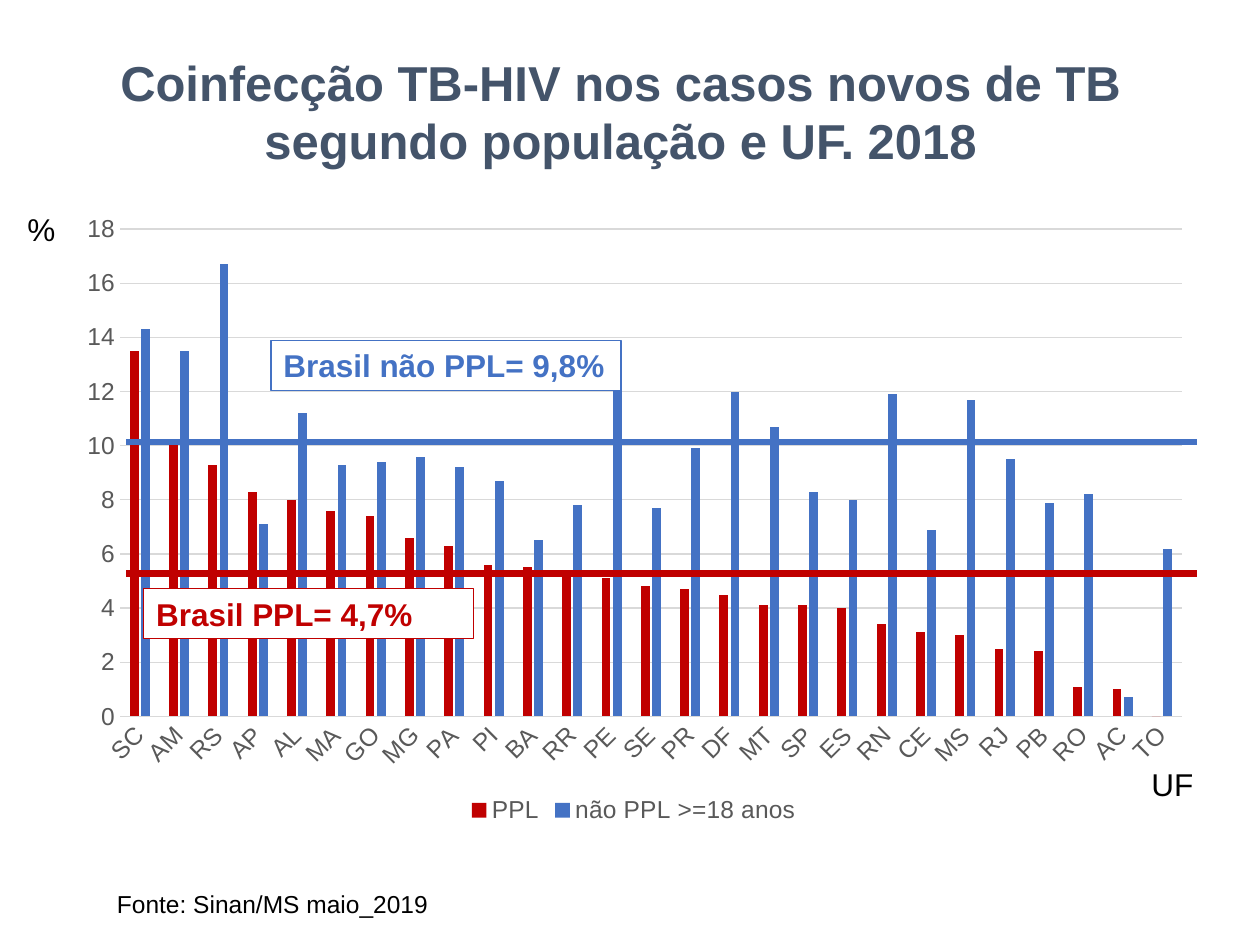
from dataclasses import dataclass
from typing import Optional

from lxml import etree
from pptx import Presentation
from pptx.chart.data import CategoryChartData
from pptx.dml.color import RGBColor
from pptx.enum.chart import XL_CHART_TYPE, XL_LEGEND_POSITION, XL_TICK_MARK
from pptx.enum.shapes import MSO_CONNECTOR, MSO_SHAPE
from pptx.enum.text import MSO_ANCHOR, PP_ALIGN
from pptx.oxml import parse_xml
from pptx.oxml.ns import nsdecls, qn
from pptx.util import Inches, Pt

COLUMN = XL_CHART_TYPE.COLUMN_CLUSTERED
BOTTOM = XL_LEGEND_POSITION.BOTTOM
NO_TICK = XL_TICK_MARK.NONE
STRAIGHT = MSO_CONNECTOR.STRAIGHT
RECT = MSO_SHAPE.RECTANGLE
TOP, MIDDLE = MSO_ANCHOR.TOP, MSO_ANCHOR.MIDDLE
LEFT, CENTER = PP_ALIGN.LEFT, PP_ALIGN.CENTER

FONT = "Arial"
COLORS = {"title": "44546A", "ppl": "C00000", "other": "4472C4",
          "axis": "595959", "grid": "D9D9D9", "text": "000000", "white": "FFFFFF"}
WIDTH, HEIGHT = Inches(10), Inches(7.5)
COLS, ROWS = 100, 75

UFS = ("SC AM RS AP AL MA GO MG PA PI BA RR PE SE PR DF MT SP ES RN CE MS "
       "RJ PB RO AC TO").split()
SERIES = {
    "PPL": ("ppl", [13.5, 10.1, 9.3, 8.3, 8, 7.6, 7.4, 6.6, 6.3, 5.6, 5.5, 5.3, 5.1, 4.8,
                    4.7, 4.5, 4.1, 4.1, 4, 3.4, 3.1, 3, 2.5, 2.4, 1.1, 1, 0]),
    "não PPL >=18 anos": ("other", [14.3, 13.5, 16.7, 7.1, 11.2, 9.3, 9.4, 9.6, 9.2, 8.7,
                                    6.5, 7.8, 12.2, 7.7, 9.9, 12, 10.7, 8.3, 8, 11.9,
                                    6.9, 11.7, 9.5, 7.9, 8.2, 0.7, 6.2]),
}
PLOT = {"x": 0.05, "y": 0.04, "w": 0.93, "h": 0.78}


@dataclass
class Box:
    col: float
    row: float
    cols: float
    rows: float

    def emu(self) -> tuple:
        return (int(WIDTH * self.col / COLS), int(HEIGHT * self.row / ROWS),
                int(WIDTH * self.cols / COLS), int(HEIGHT * self.rows / ROWS))


@dataclass
class Label:
    text: str
    box: Box
    size: int = 18
    color: str = "text"
    framed: bool = False
    wrap: bool = True


@dataclass
class Average:
    row: float
    color: str
    weight: float


LABELS = [
    Label("Fonte: Sinan/MS maio_2019", Box(8.3, 70.1, 90.6, 3.4), size=14),
    Label("%", Box(1.2, 16.2, 4, 4), wrap=False),
    Label("UF", Box(90.4, 60.2, 6, 4)),
    Label("Brasil não PPL= 9,8%", Box(21.5, 27, 27.8, 4), color="other", framed=True, wrap=False),
    Label("Brasil PPL= 4,7%", Box(11.4, 46.7, 26.2, 4), color="ppl", framed=True),
]
AVERAGES = [Average(45.5, "ppl", 3.75), Average(35.1, "other", 3.25)]


def rgb(name: str) -> RGBColor:
    return RGBColor.from_string(COLORS[name])


def set_font(font, size: float, color: str, bold: bool = False) -> None:
    font.name, font.size, font.bold = FONT, Pt(size), bold
    font.color.rgb = rgb(color)


def set_line(line, color: str, weight: float) -> None:
    line.color.rgb = rgb(color)
    line.width = Pt(weight)


def write(tf, text: str, *, size: float, color: str, bold: bool = False,
          align=LEFT, anchor=TOP, wrap: bool = True) -> None:
    tf.word_wrap = wrap
    tf.vertical_anchor = anchor
    p = tf.paragraphs[0]
    p.alignment = align
    r = p.add_run()
    r.text = text
    set_font(r.font, size, color, bold)


def add_title(s, text: str) -> None:
    sp = s.shapes.title
    sp.left, sp.top, sp.width, sp.height = Box(2, 3.6, 94.5, 10.4).emu()
    write(sp.text_frame, text, size=28, color="title", bold=True, align=CENTER, anchor=MIDDLE)


def add_label(s, label: Label) -> None:
    if label.framed:
        sp = s.shapes.add_shape(RECT, *label.box.emu())
        sp.shadow.inherit = False
        sp.fill.solid()
        sp.fill.fore_color.rgb = rgb("white")
        set_line(sp.line, label.color, 0.75)
    else:
        sp = s.shapes.add_textbox(*label.box.emu())
    write(sp.text_frame, label.text, size=label.size, color=label.color,
          bold=label.framed, wrap=label.wrap)


def add_average(s, avg: Average) -> None:
    x, y, w, _ = Box(10, avg.row, 85, 0).emu()
    line = s.shapes.add_connector(STRAIGHT, x, y, x + w, y)
    set_line(line.line, avg.color, avg.weight)
    etree.SubElement(line._element.spPr, qn("a:effectLst"))


def place_plot(chart) -> None:
    area = chart._chartSpace.chart.plotArea
    for old in area.findall(qn("c:layout")):
        area.remove(old)
    modes = "".join(f'<c:{k}Mode val="edge"/>' for k in "xy")
    sizes = "".join(f'<c:{k} val="{v}"/>' for k, v in PLOT.items())
    area.insert(0, parse_xml(
        f'<c:layout {nsdecls("c")}><c:manualLayout><c:layoutTarget val="inner"/>'
        f'{modes}{sizes}</c:manualLayout></c:layout>'))


def add_chart(s) -> None:
    data = CategoryChartData(number_format="0.0")
    data.categories = UFS
    for name, (_, values) in SERIES.items():
        data.add_series(name, values)
    chart = s.shapes.add_chart(COLUMN, *Box(5, 16.2, 90.6, 49.6).emu(), data).chart
    set_font(chart.font, 14, "text")
    chart.has_title = False
    chart.has_legend = True
    chart.legend.position = BOTTOM
    chart.legend.include_in_layout = False
    set_font(chart.legend.font, 14, "axis")

    plot = chart.plots[0]
    plot.gap_width, plot.overlap, plot.vary_by_categories = 219, -27, False
    for series, (color, _) in zip(plot.series, SERIES.values()):
        series.format.fill.solid()
        series.format.fill.fore_color.rgb = rgb(color)
        series.invert_if_negative = False

    cat, val = chart.category_axis, chart.value_axis
    for axis in (cat, val):
        axis.major_tick_mark = axis.minor_tick_mark = NO_TICK
        set_font(axis.tick_labels.font, 14, "axis")
    set_line(cat.format.line, "grid", 0.75)
    cat._element.txPr.find(qn("a:bodyPr")).set("rot", "-2700000")
    val.minimum_scale, val.maximum_scale, val.major_unit = 0, 18, 2
    val.tick_labels.number_format = "0"
    val.tick_labels.number_format_is_linked = False
    val.format.line.fill.background()
    set_line(val.major_gridlines.format.line, "grid", 0.75)
    place_plot(chart)


def main() -> None:
    prs = Presentation()
    prs.slide_width, prs.slide_height = WIDTH, HEIGHT
    s = prs.slides.add_slide(prs.slide_layouts.get_by_name("Title Only"))
    add_chart(s)
    add_title(s, "Coinfecção TB-HIV nos casos novos de TB segundo população e UF. 2018")
    for label in LABELS:
        add_label(s, label)
    for avg in AVERAGES:
        add_average(s, avg)
    prs.save("out.pptx")


if __name__ == "__main__":
    main()
